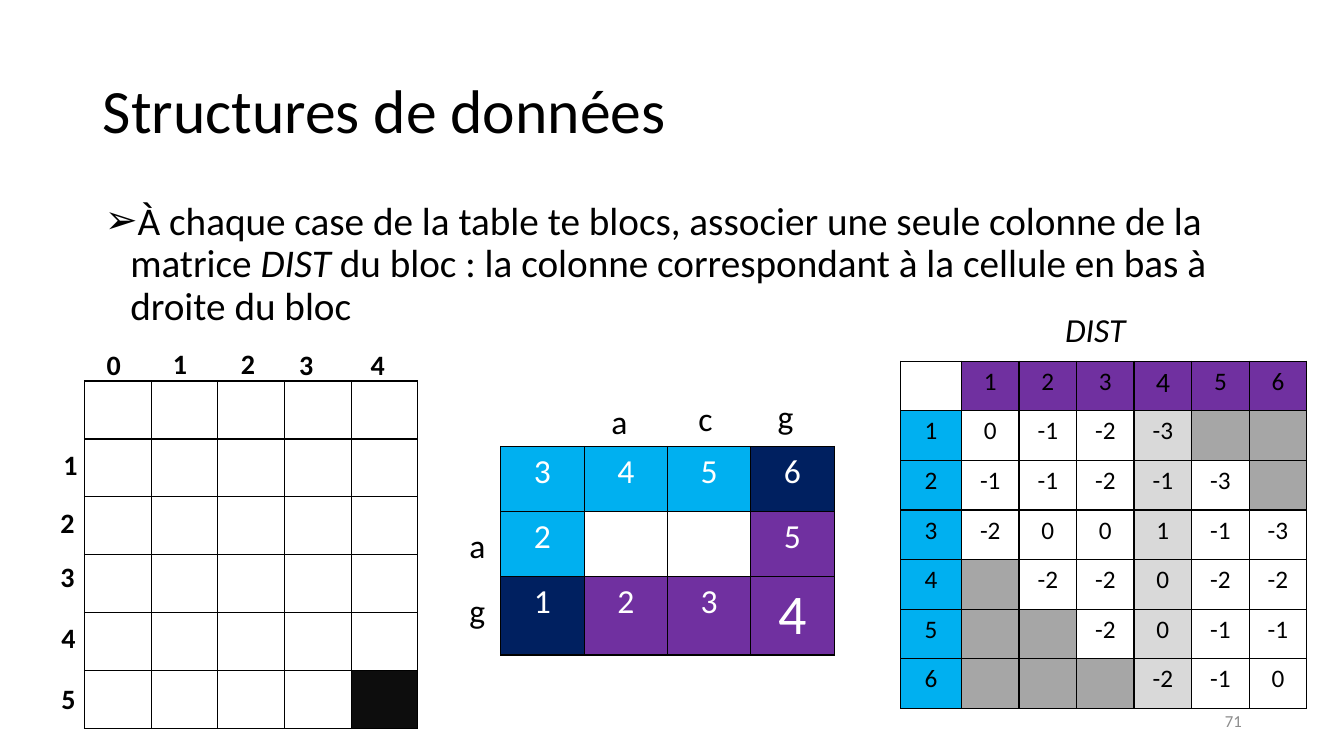
from dataclasses import dataclass

from lxml import etree
from pptx import Presentation
from pptx.dml.color import RGBColor
from pptx.enum.text import MSO_ANCHOR, MSO_AUTO_SIZE, PP_ALIGN
from pptx.oxml.ns import qn
from pptx.util import Cm, Pt

LEFT, CENTER, RIGHT = PP_ALIGN.LEFT, PP_ALIGN.CENTER, PP_ALIGN.RIGHT
MIDDLE, TOP = MSO_ANCHOR.MIDDLE, MSO_ANCHOR.TOP
FIXED = MSO_AUTO_SIZE.NONE


@dataclass(frozen=True)
class Theme:
    font: str = "Calibri"
    black: str = "000000"
    white: str = "FFFFFF"
    gray: str = "8C8C8C"
    title: int = 44
    body: int = 28
    large: int = 40
    mid: int = 24
    digit: int = 20
    cell: int = 18
    small: int = 12


theme = Theme()
fills = {"W": theme.white, "K": "0D0D0D", "B": "00B0F0", "N": "002060",
         "P": "7030A0", "L": "D9D9D9", "G": "A6A6A6"}

deck = Presentation()
deck.slide_width, deck.slide_height = Cm(33.87), Cm(19.05)
slide = deck.slides.add_slide(deck.slide_layouts[1])


def style(para, size, color=theme.black, bold=False, align=LEFT):
    para.alignment = align
    for run in para.runs:
        run.font.name = theme.font
        run.font.size = Pt(size)
        run.font.bold = bold
        run.font.color.rgb = RGBColor.from_string(color)


def grid(left, top, widths, heights, texts, codes, size, color):
    frame = slide.shapes.add_table(len(heights), len(widths), Cm(left), Cm(top),
                                   Cm(sum(widths)), Cm(sum(heights)))
    table = frame.table
    table.first_row = table.horz_banding = False
    for col, width in zip(table.columns, widths):
        col.width = Cm(width)
    for y, height in enumerate(heights):
        table.rows[y].height = Cm(height)
        for x in range(len(widths)):
            cell = table.cell(y, x)
            cell.text = texts[y][x]
            style(cell.text_frame.paragraphs[0], size, color, align=CENTER)
            cell.fill.solid()
            cell.fill.fore_color.rgb = RGBColor.from_string(fills[codes[y][x]])
            props = cell.fill._xPr
            for spot, side in enumerate(("a:lnL", "a:lnR", "a:lnT", "a:lnB")):
                line = etree.Element(qn(side), w=str(Pt(1)))
                paint = etree.SubElement(line, qn("a:solidFill"))
                etree.SubElement(paint, qn("a:srgbClr"), val=theme.black)
                props.insert(spot, line)
    return table


title, body = slide.shapes.title, slide.placeholders[1]
for holder, left, top in ((title, 2.34, 1.02), (body, 2.39, 4.95)):
    holder.left, holder.top = Cm(left), Cm(top)
    holder.width, holder.height = Cm(29.21), Cm(3.68)
    holder.text_frame.auto_size = FIXED

title.text_frame.text = "Structures de données"
title.text_frame.vertical_anchor = MIDDLE
head = title.text_frame.paragraphs[0]
head.line_spacing = 0.9
style(head, theme.title)

body.text_frame.vertical_anchor = TOP
point = body.text_frame.paragraphs[0]
for part in ("À chaque case de la table te blocs, associer une seule colonne de la matrice ",
             "DIST",
             " du bloc : la colonne correspondant à la cellule en bas à droite du bloc"):
    run = point.add_run()
    run.text = part
    run.font.italic = part == "DIST"
style(point, theme.body)
point.line_spacing = 0.9
point.space_before = Pt(10)
props = point._p.get_or_add_pPr()
props.set("marL", str(Cm(0.64)))
props.set("indent", str(-Cm(0.64)))
etree.SubElement(props, qn("a:buChar"), char="➢")

grid(2.13, 9.6, [1.68] * 5, [1.46] * 6, [[""] * 5] * 6,
     ["WWWWW"] * 5 + ["WWWWK"], theme.cell, theme.black)

block = grid(12.62, 11.25, [2.1] * 4, [1.64, 1.64, 1.95],
             ["3456", ["2", "", "", "5"], "1234"],
             ["BBBN", "BWWP", "NPPP"], theme.mid, theme.white)
style(block.cell(2, 3).text_frame.paragraphs[0], theme.large, theme.white, align=CENTER)

dist = grid(22.7, 9.1, [1.53] + [1.45] * 6, [1.25] * 7, [
    ["", "1", "2", "3", "4", "5", "6"],
    ["1", "0", "-1", "-2", "-3", "", ""],
    ["2", "-1", "-1", "-2", "-1", "-3", ""],
    ["3", "-2", "0", "0", "1", "-1", "-3"],
    ["4", "", "-2", "-2", "0", "-2", "-2"],
    ["5", "", "", "-2", "0", "-1", "-1"],
    ["6", "", "", "", "-2", "-1", "0"],
], ["WPPPPPP", "BWWWLGG", "BWWWLWG", "BWWWLWW", "BGWWLWW", "BGGWLWW", "BGGGLWW"],
    theme.cell, theme.black)
style(dist.cell(0, 4).text_frame.paragraphs[0], theme.digit, align=CENTER)

digits = [("0", 2.44, 8.64), ("1", 4.11, 8.61), ("2", 5.82, 8.61),
          ("3", 7.29, 8.64), ("4", 9.09, 8.64),
          ("1", 1.35, 11.15), ("2", 1.27, 12.62), ("3", 1.27, 13.97),
          ("4", 1.3, 15.52), ("5", 1.3, 17.04)]
letters = [("g", 11.58, 14.73), ("a", 11.58, 13.11), ("a", 15.16, 9.98),
           ("c", 17.35, 9.91), ("g", 19.35, 9.86)]
labels = [(*digit, 0.86, 1.12, theme.digit, True) for digit in digits]
labels += [(*letter, 0.74, 1.27, theme.mid, False) for letter in letters]
labels.append(("DIST", 26.59, 7.65, 2.1, 1.27, theme.mid, False))
for text, left, top, width, height, size, bold in labels:
    box = slide.shapes.add_textbox(Cm(left), Cm(top), Cm(width), Cm(height))
    box.text_frame.word_wrap = True
    box.text_frame.text = text
    para = box.text_frame.paragraphs[0]
    style(para, size, bold=bold)
    para.runs[0].font.italic = text == "DIST"

page = slide.shapes.add_textbox(Cm(23.93), Cm(17.65), Cm(7.62), Cm(1.02))
page.text_frame.word_wrap = True
page.text_frame.vertical_anchor = MIDDLE
page.text_frame.text = "71"
style(page.text_frame.paragraphs[0], theme.small, theme.gray, align=RIGHT)

deck.save("out.pptx")
